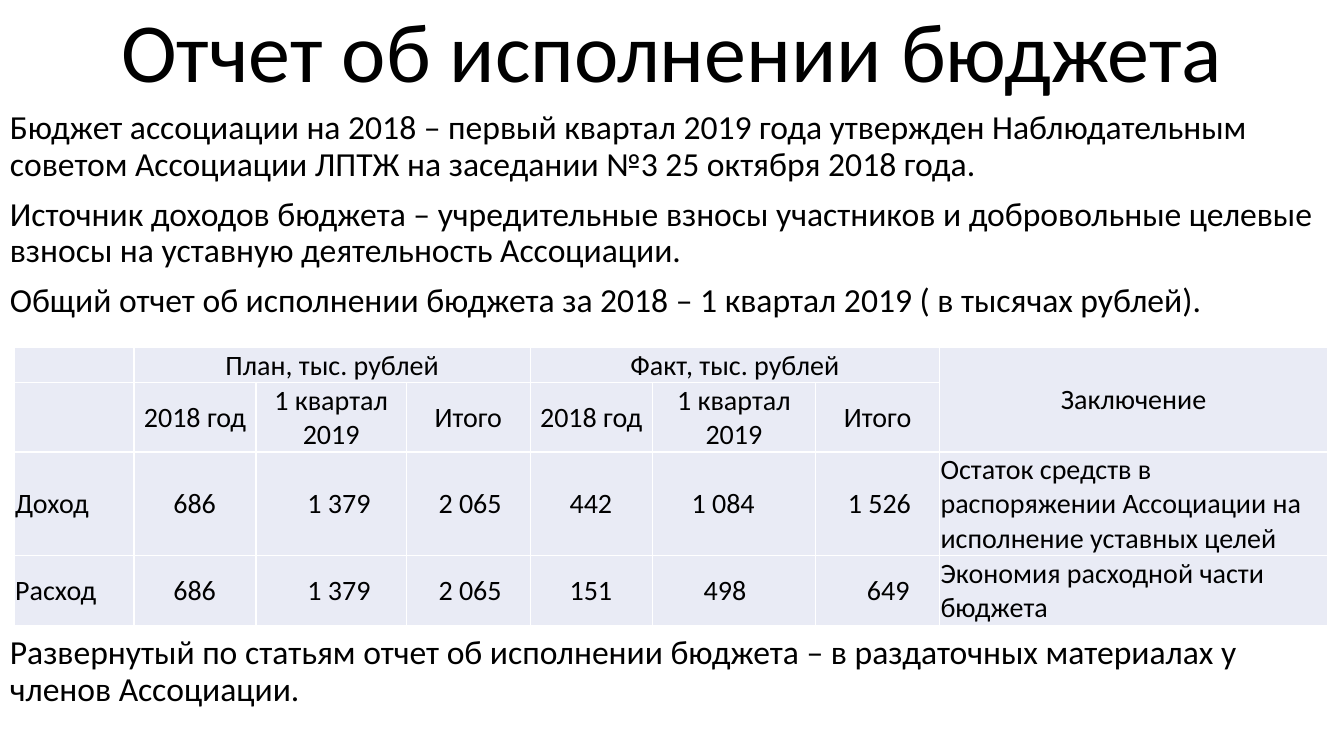
from dataclasses import dataclass

from lxml.etree import SubElement
from pptx import Presentation
from pptx.dml.color import RGBColor
from pptx.enum.text import MSO_ANCHOR, PP_ALIGN
from pptx.oxml.ns import qn
from pptx.util import Inches, Pt

FONT = "Calibri"
BLACK = "000000"
WHITE = "FFFFFF"
CELL_FILL = "E9EBF5"
CELL_MARGIN = 0.01
COLUMN_WIDTHS = [1.19, 1.21, 1.49, 1.23, 1.21, 1.62, 1.23, 3.85]
ROW_HEIGHTS = [0.34, 0.69, 1.03, 0.69]


@dataclass(frozen=True)
class TextBlock:
    top: float
    height: float
    size: int
    paragraphs: tuple[str, ...]
    align: PP_ALIGN = PP_ALIGN.LEFT
    anchor: MSO_ANCHOR = MSO_ANCHOR.TOP


@dataclass(frozen=True)
class Entry:
    text: str = ""
    indent: float = CELL_MARGIN
    align: PP_ALIGN = PP_ALIGN.LEFT
    rows: int = 1
    columns: int = 1


TEXT_BLOCKS = [
    TextBlock(0, 1.05, 60, ("Отчет об исполнении бюджета",), PP_ALIGN.CENTER, MSO_ANCHOR.BOTTOM),
    TextBlock(1.05, 2.35, 24, (
        "Бюджет ассоциации на 2018 – первый квартал 2019 года утвержден Наблюдательным "
        "советом Ассоциации ЛПТЖ на заседании №3 25 октября 2018 года.",
        "Источник доходов бюджета – учредительные взносы участников и добровольные целевые "
        "взносы на уставную деятельность Ассоциации.",
        "Общий отчет об исполнении бюджета за 2018 – 1 квартал 2019 ( в тысячах рублей).",
    )),
    TextBlock(6.26, 1.24, 24, (
        "Развернутый по статьям отчет об исполнении бюджета – в раздаточных материалах у "
        "членов Ассоциации.",
    )),
]


def heading(text: str, rows: int = 1, columns: int = 1) -> Entry:
    return Entry(text, align=PP_ALIGN.CENTER, rows=rows, columns=columns)


PERIODS = [heading(text) for text in ("2018 год", "1 квартал 2019", "Итого")]
BUDGET_ROWS = [
    [Entry(), heading("План, тыс. рублей", columns=3), None, None,
     heading("Факт, тыс. рублей", columns=3), None, None, heading("Заключение", rows=2)],
    [Entry(), *PERIODS, *PERIODS, None],
    [Entry("Доход"), Entry("686", 0.39), Entry("1 379", 0.51), Entry("2 065", 0.32),
     Entry("442", 0.39), Entry("1 084", 0.39), Entry("1 526", 0.32),
     Entry("Остаток средств в распоряжении Ассоциации на исполнение уставных целей")],
    [Entry("Расход"), Entry("686", 0.39), Entry("1 379", 0.51), Entry("2 065", 0.32),
     Entry("151", 0.39), Entry("498", 0.51), Entry("649", 0.51),
     Entry("Экономия расходной части бюджета")],
]


def color(value: str) -> RGBColor:
    return RGBColor.from_string(value)


def style_paragraph(para, size: int, align: PP_ALIGN) -> None:
    para.alignment = align
    para.font.name = FONT
    para.font.size = Pt(size)
    para.font.bold = False
    para.font.color.rgb = color(BLACK)


def add_text_block(page, block: TextBlock) -> None:
    box = page.shapes.add_textbox(0, Inches(block.top), Inches(13.33), Inches(block.height))
    frame = box.text_frame
    frame.word_wrap = True
    frame.vertical_anchor = block.anchor
    for index, text in enumerate(block.paragraphs):
        para = frame.add_paragraph() if index else frame.paragraphs[0]
        para.text = text
        para.line_spacing = 0.9
        para.space_before = Pt(10 if index else 0)
        style_paragraph(para, block.size, block.align)


def add_borders(cell) -> None:
    properties = cell._tc.get_or_add_tcPr()
    for side in ("a:lnL", "a:lnR", "a:lnT", "a:lnB"):
        line = SubElement(properties, qn(side), w=str(Pt(1)))
        fill = SubElement(line, qn("a:solidFill"))
        SubElement(fill, qn("a:srgbClr"), val=WHITE)


def fill_cell(cell, entry: Entry) -> None:
    cell.margin_left = Inches(entry.indent)
    cell.margin_right = cell.margin_top = Inches(CELL_MARGIN)
    cell.margin_bottom = 0
    cell.vertical_anchor = MSO_ANCHOR.MIDDLE
    para = cell.text_frame.paragraphs[0]
    if entry.text:
        para.text = entry.text
    style_paragraph(para, 20, entry.align)


def add_budget_table(page) -> None:
    table = page.shapes.add_table(
        len(ROW_HEIGHTS), len(COLUMN_WIDTHS), Inches(0.14), Inches(3.45),
        Inches(sum(COLUMN_WIDTHS)), Inches(sum(ROW_HEIGHTS)),
    ).table
    table.first_row = False
    table.horz_banding = False
    for column, width in zip(table.columns, COLUMN_WIDTHS):
        column.width = Inches(width)
    for row, height in zip(table.rows, ROW_HEIGHTS):
        row.height = Inches(height)
    for row_index, entries in enumerate(BUDGET_ROWS):
        for column_index, entry in enumerate(entries):
            cell = table.cell(row_index, column_index)
            add_borders(cell)
            cell.fill.solid()
            cell.fill.fore_color.rgb = color(CELL_FILL)
            fill_cell(cell, entry or Entry())
            if entry and entry.rows * entry.columns > 1:
                cell.merge(table.cell(row_index + entry.rows - 1,
                                      column_index + entry.columns - 1))


def main() -> None:
    deck = Presentation()
    deck.slide_width = Inches(13.33)
    deck.slide_height = Inches(7.5)
    page = deck.slides.add_slide(deck.slide_layouts[6])
    for block in TEXT_BLOCKS:
        add_text_block(page, block)
    add_budget_table(page)
    deck.save("out.pptx")


if __name__ == "__main__":
    main()
